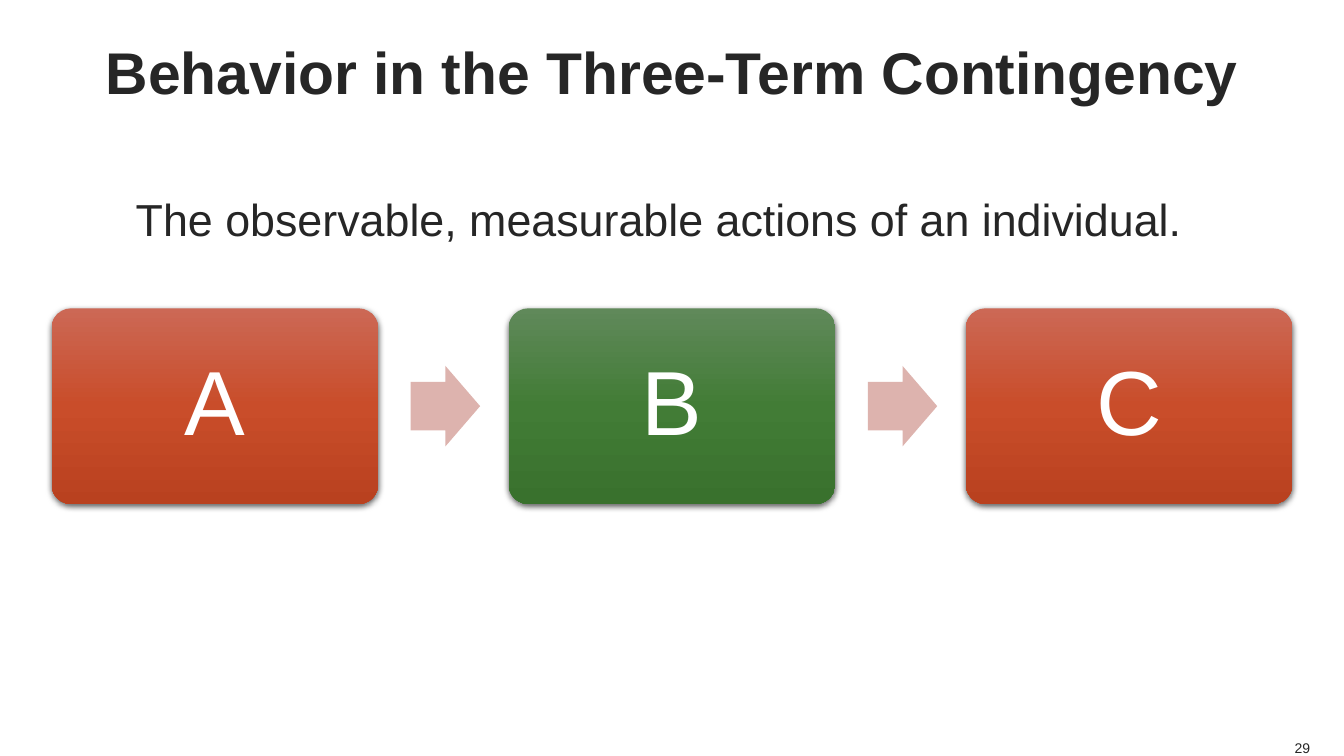
from pptx import Presentation
from pptx.dml.color import RGBColor
from pptx.enum.shapes import MSO_SHAPE as Shape
from pptx.enum.text import MSO_ANCHOR as Anchor, PP_ALIGN as Align
from pptx.oxml import parse_xml
from pptx.oxml.ns import nsdecls
from pptx.util import Cm, Pt


def colour(value):
    return RGBColor.from_string(value)


class Page:
    font = "Arial"
    ink = "262626"

    def __init__(self, deck):
        self.slide = deck.slides.add_slide(deck.slide_layouts[5])

    def set_text(self, box, text, size, ink=None, bold=False, align=Align.CENTER,
                 anchor=Anchor.MIDDLE, spacing=1.0, wrap=True):
        frame = box.text_frame
        frame.word_wrap = wrap
        frame.vertical_anchor = anchor
        frame.margin_left = frame.margin_right = 0
        frame.margin_top = frame.margin_bottom = 0
        para = frame.paragraphs[0]
        para.alignment = align
        para.line_spacing = spacing
        span = para.add_run()
        span.text = text
        span.font.name = self.font
        span.font.size = Pt(size)
        span.font.bold = bold
        span.font.color.rgb = colour(ink or self.ink)

    def title(self, text, left, top, width, height):
        box = self.slide.shapes.title
        box.left, box.top, box.width, box.height = Cm(left), Cm(top), Cm(width), Cm(height)
        self.set_text(box, text, 42, bold=True)

    def label(self, text, left, top, width, height, size, **style):
        box = self.slide.shapes.add_textbox(Cm(left), Cm(top), Cm(width), Cm(height))
        self.set_text(box, text, size, **style)

    def shape(self, kind, left, top, width, height, *adjustments):
        box = self.slide.shapes.add_shape(kind, Cm(left), Cm(top), Cm(width), Cm(height))
        box.shadow.inherit = False
        box.line.fill.background()
        for index, value in enumerate(adjustments):
            box.adjustments[index] = value
        return box

    def card(self, text, left, top, width, height, shades):
        box = self.shape(Shape.ROUNDED_RECTANGLE, left, top, width, height, 0.1)
        box.fill.gradient()
        box.fill.gradient_angle = 270
        stops = box._element.spPr.find(".//{*}gsLst")
        for stop in list(stops):
            stops.remove(stop)
        for position, shade in zip((0, 50000, 100000), shades):
            stops.append(parse_xml(
                f'<a:gs {nsdecls("a")} pos="{position}"><a:srgbClr val="{shade}"/></a:gs>'))
        effects = box._element.spPr.find("{*}effectLst")
        effects.append(parse_xml(
            f'<a:outerShdw {nsdecls("a")} blurRad="{Pt(4.5)}" dist="{Pt(1.5)}" dir="5400000" '
            'rotWithShape="0"><a:srgbClr val="000000"><a:alpha val="63000"/></a:srgbClr>'
            '</a:outerShdw>'))
        self.set_text(box, text, 65, ink="FFFFFF", spacing=0.9)

    def arrow(self, left, top, width, height):
        box = self.shape(Shape.RIGHT_ARROW, left, top, width, height, 0.6, 0.5)
        box.fill.solid()
        box.fill.fore_color.rgb = colour("DDB3AE")


def main():
    deck = Presentation()
    deck.slide_width, deck.slide_height = Cm(33.87), Cm(19.05)
    page = Page(deck)
    page.title("Behavior in the Three-Term Contingency", 1.27, 0, 31.33, 3.56)
    page.label("The observable, measurable actions of an individual.",
               0.95, 4.5, 31.33, 3.3, 32, anchor=Anchor.TOP, spacing=1.25)

    red = ("CC6855", "C94D2A", "B9411F")
    green = ("60895A", "427C36", "39712D")
    terms = (("A", red), ("B", green), ("C", red))
    first, top, width, height, pitch = 1.3, 7.77, 8.23, 4.93, 11.52
    arrow_width, arrow_height, arrow_gap = 1.75, 2.03, 0.82
    for index, (term, shades) in enumerate(terms):
        left = first + index * pitch
        page.card(term, left, top, width, height, shades)
        if index < len(terms) - 1:
            page.arrow(left + width + arrow_gap, top + (height - arrow_height) / 2,
                       arrow_width, arrow_height)

    page.label("29", 32.59, 18.62, 0.43, 0.43, 10,
               align=Align.RIGHT, anchor=Anchor.BOTTOM, wrap=False)
    deck.save("out.pptx")


if __name__ == "__main__":
    main()
